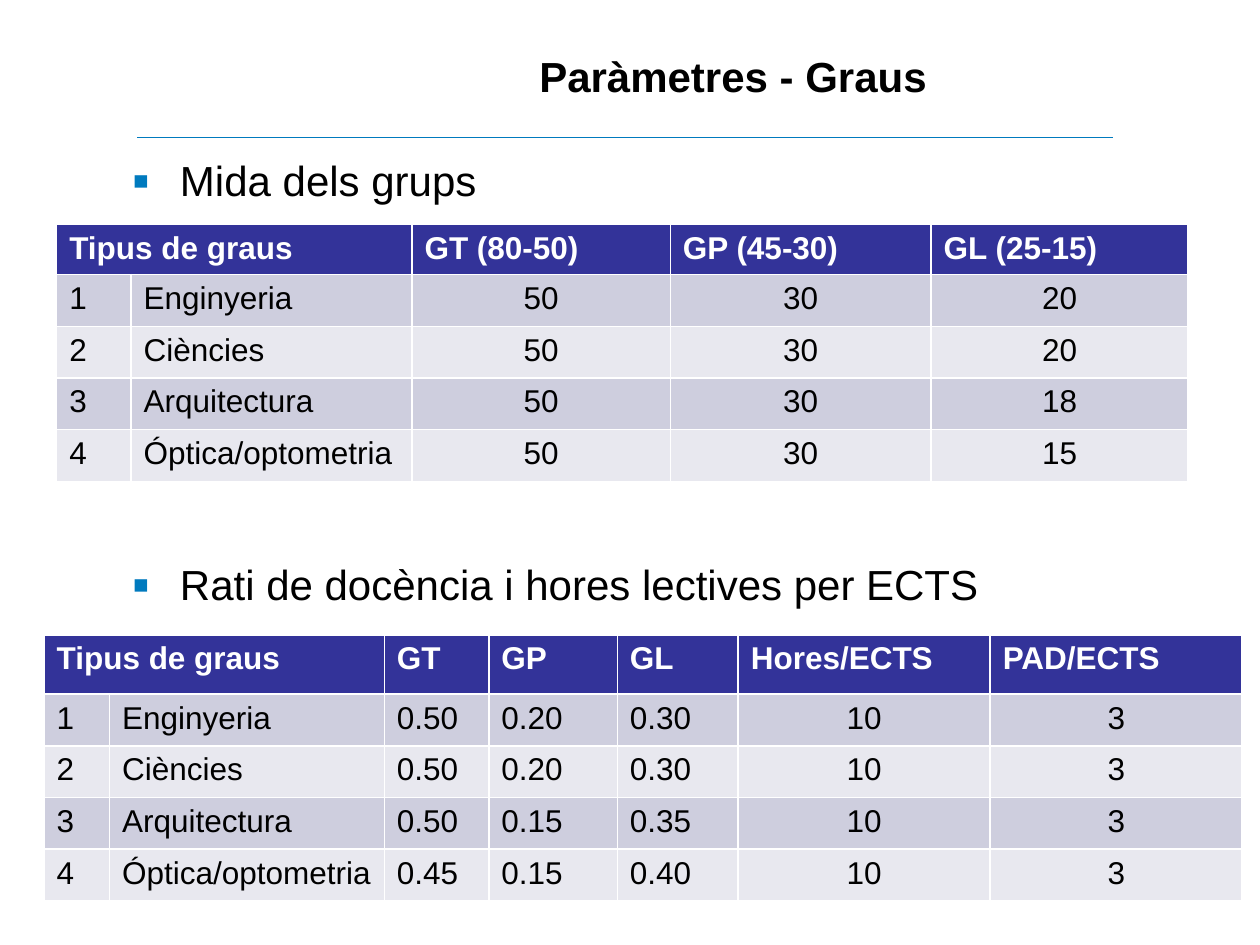
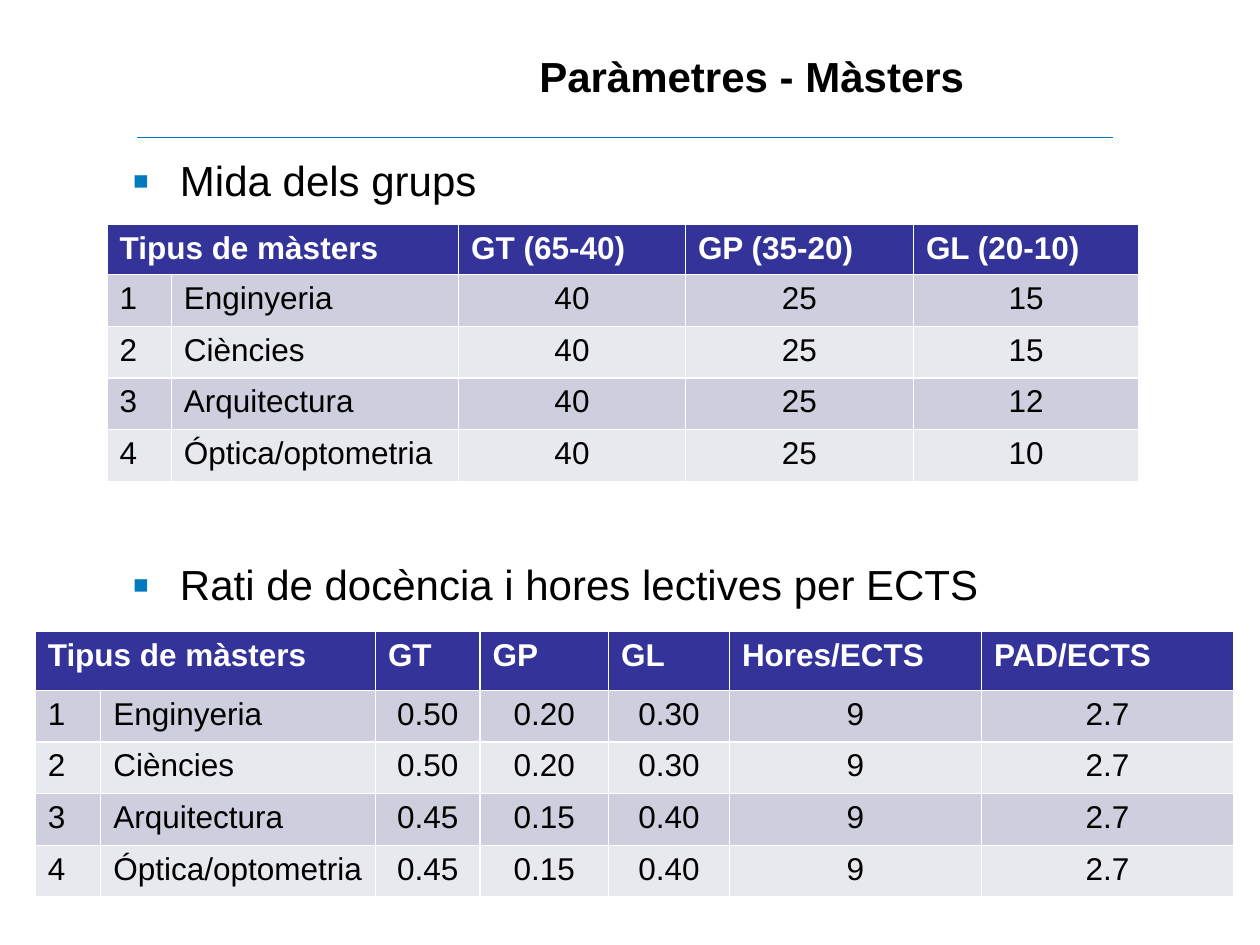
from lxml.etree import SubElement
from pptx import Presentation
from pptx.dml.color import RGBColor
from pptx.enum.shapes import MSO_CONNECTOR
from pptx.enum.text import MSO_ANCHOR, PP_ALIGN
from pptx.oxml.ns import qn
from pptx.util import Inches, Pt

COLORS = {
    "text": "000000",
    "accent": "007ABE",
    "header": "333399",
    "header_text": "FFFFFF",
    "odd_row": "CECEDE",
    "even_row": "E8E8EF",
}
FONT = "Arial"
DEGREE_TYPES = ["Enginyeria", "Ciències", "Arquitectura", "Óptica/optometria"]
HEADINGS = ["Mida dels grups", "Rati de docència i hores lectives per ECTS"]
RATIO_HEADERS = ["GT", "GP", "GL", "Hores/ECTS", "PAD/ECTS"]
RATIO_COLUMNS = [5.2, 21.8, 8.3, 10.2, 9.6, 20, 20]
BODY_ROW = 4.1

presentation = Presentation()
presentation.slide_width = Inches(10)
presentation.slide_height = Inches(7.5)
column = presentation.slide_width / 100
row = presentation.slide_height / 75


def style_font(paragraph, size, color, bold=False):
    paragraph.font.name = FONT
    paragraph.font.size = Pt(size)
    paragraph.font.bold = bold
    paragraph.font.color.rgb = RGBColor.from_string(COLORS[color])


def add_degree_table(slide, left, top, widths, header_height, headers, values, centred_from):
    heights = [header_height] + [BODY_ROW] * len(values)
    table = slide.shapes.add_table(
        len(heights), len(widths), int(left * column), int(top * row),
        int(sum(widths) * column), int(sum(heights) * row)).table
    for table_column, width in zip(table.columns, widths):
        table_column.width = int(width * column)
    for table_row, height in zip(table.rows, heights):
        table_row.height = int(height * row)
    body = [[str(number), name, *numbers]
            for number, (name, numbers) in enumerate(zip(DEGREE_TYPES, values), 1)]
    for row_index, texts in enumerate([[headers[0], "", *headers[1:]], *body]):
        is_header = row_index == 0
        fill = "header" if is_header else "odd_row" if row_index % 2 else "even_row"
        for column_index, text in enumerate(texts):
            cell = table.cell(row_index, column_index)
            cell.fill.solid()
            cell.fill.fore_color.rgb = RGBColor.from_string(COLORS[fill])
            cell.text = text
            paragraph = cell.text_frame.paragraphs[0]
            style_font(paragraph, 18, "header_text" if is_header else "text", is_header)
            if not is_header and column_index >= centred_from:
                paragraph.alignment = PP_ALIGN.CENTER
    table.cell(0, 0).merge(table.cell(0, 1))


SLIDES = [
    {
        "title": "Paràmetres - Graus",
        "types": "Tipus de graus",
        "size_left": 4.5,
        "size_columns": [5.9, 22.3, 20.5, 20.7, 20.4],
        "size_headers": ["GT (80-50)", "GP (45-30)", "GL (25-15)"],
        "sizes": [["50", "30", last] for last in ("20", "20", "18", "15")],
        "ratio_at": (3.5, 50.4),
        "ratios": [["0.50", "0.20", "0.30"], ["0.50", "0.20", "0.30"],
                   ["0.50", "0.15", "0.35"], ["0.45", "0.15", "0.40"]],
        "hours": ["10", "3"],
        "ratio_centred_from": 5,
    },
    {
        "title": "Paràmetres - Màsters",
        "types": "Tipus de màsters",
        "size_left": 8.5,
        "size_columns": [5.1, 22.8, 18, 18.1, 17.9],
        "size_headers": ["GT (65-40)", "GP (35-20)", "GL (20-10)"],
        "sizes": [["40", "25", last] for last in ("15", "15", "12", "10")],
        "ratio_at": (2.8, 50.1),
        "ratios": [["0.50", "0.20", "0.30"], ["0.50", "0.20", "0.30"],
                   ["0.45", "0.15", "0.40"], ["0.45", "0.15", "0.40"]],
        "hours": ["9", "2.7"],
        "ratio_centred_from": 2,
    },
]

for content in SLIDES:
    slide = presentation.slides.add_slide(presentation.slide_layouts[5])

    title = slide.shapes.title
    title.left, title.top = int(31.8 * column), int(1.3 * row)
    title.width, title.height = int(56.1 * column), int(9.4 * row)
    title.text_frame.text = content["title"]
    title.text_frame.margin_left = int(11 * column)
    title.text_frame.vertical_anchor = MSO_ANCHOR.MIDDLE
    paragraph = title.text_frame.paragraphs[0]
    paragraph.alignment = PP_ALIGN.LEFT
    style_font(paragraph, 24, "text", True)

    rule = slide.shapes.add_connector(
        MSO_CONNECTOR.STRAIGHT, int(10.9 * column), int(10.9 * row),
        int(88.3 * column), int(10.9 * row))
    rule.line.color.rgb = RGBColor.from_string(COLORS["accent"])
    rule.line.width = Pt(0.75)
    SubElement(rule._element.spPr, qn("a:effectLst"))

    headings = slide.shapes.add_textbox(
        int(9.5 * column), int(11.5 * row), int(78.5 * column), int(41.6 * row))
    frame = headings.text_frame
    frame.word_wrap = True
    frame.margin_top = int(0.8 * row)
    for index, heading in enumerate(HEADINGS):
        paragraph = frame.add_paragraph() if index else frame.paragraphs[0]
        paragraph.text = heading
        properties = paragraph._p.get_or_add_pPr()
        properties.set("marL", str(int(3.8 * column)))
        properties.set("indent", str(int(-3.8 * column)))
        bullet_color = SubElement(properties, qn("a:buClr"))
        SubElement(bullet_color, qn("a:srgbClr"), val=COLORS["accent"])
        SubElement(properties, qn("a:buSzPct"), val="119000")
        SubElement(properties, qn("a:buFont"), typeface=FONT)
        SubElement(properties, qn("a:buChar"), char="▪")
        style_font(paragraph, 24, "text")
        if index:
            paragraph.space_before = Pt(202)

    add_degree_table(
        slide, content["size_left"], 17.8, content["size_columns"], 3.8,
        [content["types"], *content["size_headers"]], content["sizes"], 2)
    add_degree_table(
        slide, *content["ratio_at"], RATIO_COLUMNS, 4.7,
        [content["types"], *RATIO_HEADERS],
        [ratio + content["hours"] for ratio in content["ratios"]],
        content["ratio_centred_from"])

presentation.save("out.pptx")
